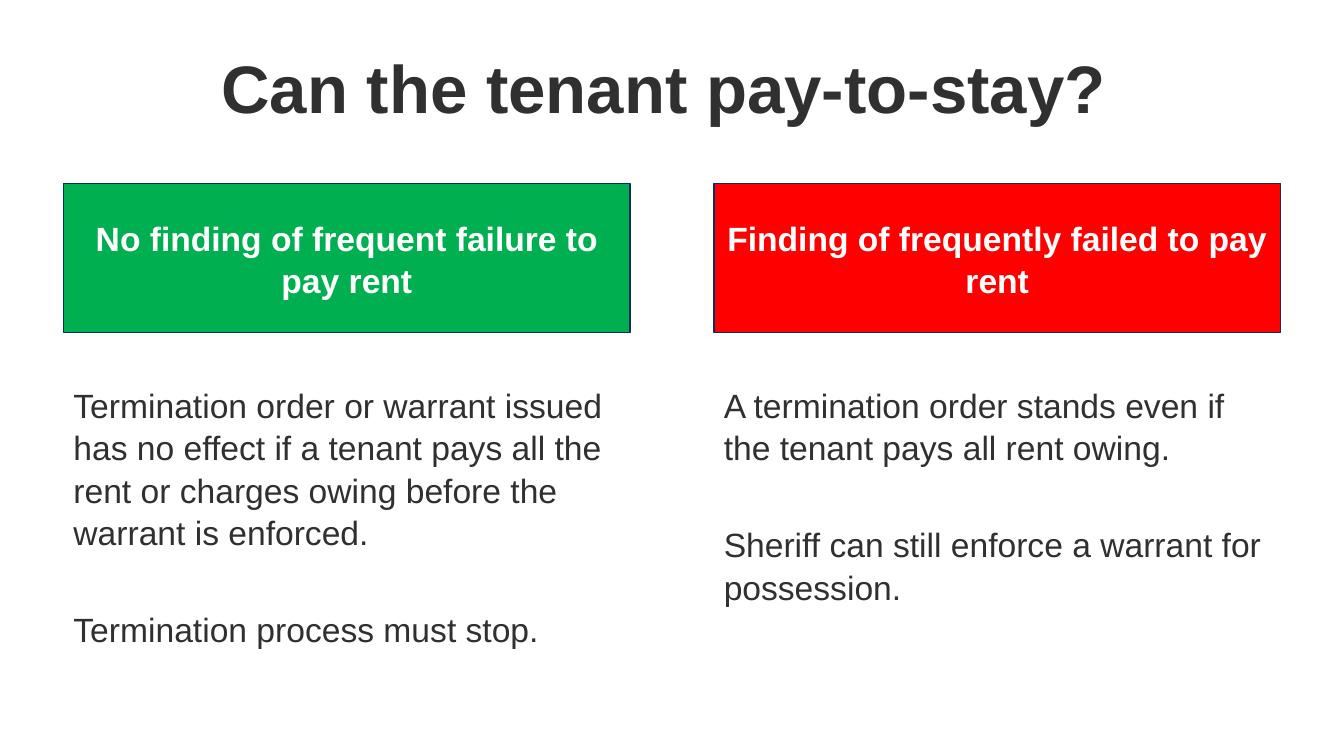
from dataclasses import dataclass

from pptx import Presentation
from pptx.dml.color import RGBColor
from pptx.enum.shapes import MSO_SHAPE
from pptx.enum.text import MSO_ANCHOR, PP_ALIGN
from pptx.util import Inches, Pt


@dataclass(frozen=True)
class Theme:
    font: str = "Arial"
    title_size: Pt = Pt(48)
    text_size: Pt = Pt(24)
    line_spacing: float = 1.05
    paragraph_gap: Pt = Pt(39)
    text: RGBColor = RGBColor(0x30, 0x30, 0x30)
    white: RGBColor = RGBColor(0xFF, 0xFF, 0xFF)
    outline: RGBColor = RGBColor(0x07, 0x30, 0x61)
    green: RGBColor = RGBColor(0x00, 0xB0, 0x50)
    red: RGBColor = RGBColor(0xFF, 0x00, 0x00)


THEME = Theme()
LEFT_MARGIN = 0.63
COLUMN_WIDTH = 5.62
COLUMN_STEP = 6.45

OUTCOMES = [
    (
        "No finding of frequent failure to pay rent",
        THEME.green,
        [
            "Termination order or warrant issued has no effect if a tenant pays "
            "all the rent or charges owing before the warrant is enforced.",
            "Termination process must stop.",
        ],
    ),
    (
        "Finding of frequently failed to pay rent",
        THEME.red,
        [
            "A termination order stands even if the tenant pays all rent owing.",
            "Sheriff can still enforce a warrant for possession.",
        ],
    ),
]


def style_paragraph(paragraph, size, color, bold=False, alignment=PP_ALIGN.LEFT,
                    line_spacing=THEME.line_spacing):
    paragraph.alignment = alignment
    paragraph.line_spacing = line_spacing
    paragraph.font.name = THEME.font
    paragraph.font.size = size
    paragraph.font.bold = bold
    paragraph.font.color.rgb = color


def add_title(slide, text):
    box = slide.shapes.add_textbox(
        Inches(LEFT_MARGIN), Inches(0.43), Inches(11.91), Inches(0.97))
    frame = box.text_frame
    frame.word_wrap = True
    frame.vertical_anchor = MSO_ANCHOR.MIDDLE
    frame.text = text
    style_paragraph(frame.paragraphs[0], THEME.title_size, THEME.text, bold=True,
                    alignment=PP_ALIGN.CENTER, line_spacing=0.9)


def add_heading(slide, left, text, fill):
    shape = slide.shapes.add_shape(
        MSO_SHAPE.RECTANGLE, Inches(left), Inches(1.82),
        Inches(COLUMN_WIDTH), Inches(1.48))
    shape.shadow.inherit = False
    shape.fill.solid()
    shape.fill.fore_color.rgb = fill
    shape.line.color.rgb = THEME.outline
    shape.line.width = Pt(1)
    frame = shape.text_frame
    frame.word_wrap = True
    frame.vertical_anchor = MSO_ANCHOR.MIDDLE
    frame.text = text
    style_paragraph(frame.paragraphs[0], THEME.text_size, THEME.white, bold=True,
                    alignment=PP_ALIGN.CENTER)


def add_body(slide, left, texts):
    box = slide.shapes.add_textbox(
        Inches(left), Inches(3.75), Inches(COLUMN_WIDTH), Inches(3.1))
    frame = box.text_frame
    frame.word_wrap = True
    frame.text = "\n".join(texts)
    for paragraph in frame.paragraphs:
        style_paragraph(paragraph, THEME.text_size, THEME.text)
    for paragraph in frame.paragraphs[1:]:
        paragraph.space_before = THEME.paragraph_gap


def main():
    presentation = Presentation()
    presentation.slide_width = Inches(13.33)
    presentation.slide_height = Inches(7.5)
    slide = presentation.slides.add_slide(presentation.slide_layouts[6])

    add_title(slide, "Can the tenant pay-to-stay?")
    for column, (heading, fill, texts) in enumerate(OUTCOMES):
        left = LEFT_MARGIN + column * COLUMN_STEP
        add_heading(slide, left, heading, fill)
        add_body(slide, left, texts)

    presentation.save("out.pptx")


if __name__ == "__main__":
    main()
